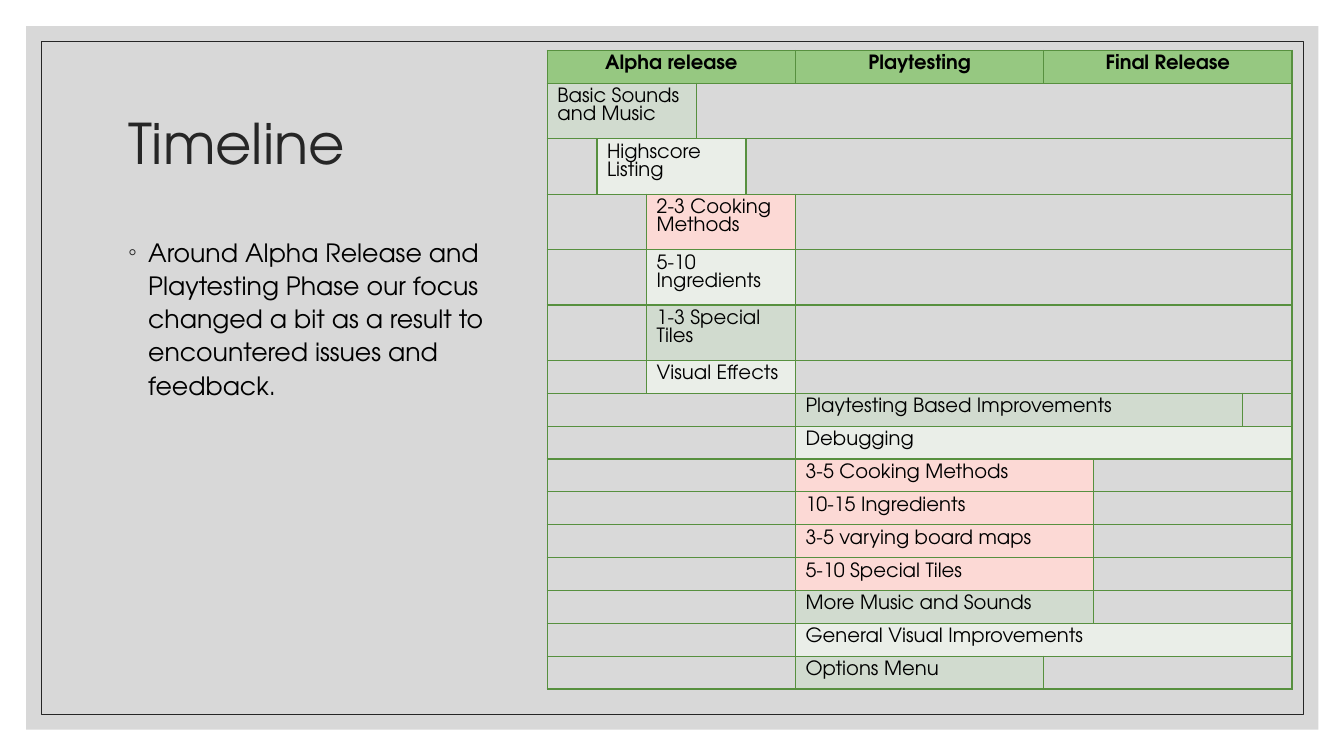
from collections import namedtuple

from lxml import etree
from pptx import Presentation
from pptx import util as u
from pptx.dml.color import RGBColor
from pptx.enum import shapes, text
from pptx.oxml import ns

FONT = "TeX Gyre Adventor"
BLACK = RGBColor(0x00, 0x00, 0x00)
INK = RGBColor(0x26, 0x26, 0x26)
PANEL = RGBColor(0xBF, 0xBF, 0xBF)
EMPTY = RGBColor(0xD9, 0xD9, 0xD9)
HEADER = RGBColor(0x96, 0xC8, 0x81)
SAGE = RGBColor(0xD1, 0xDB, 0xCF)
PALE = RGBColor(0xEA, 0xEE, 0xE8)
PINK = RGBColor(0xFC, 0xD9, 0xD5)
BORDER = RGBColor(0x57, 0x90, 0x3F)

Box = namedtuple("Box", "left top width height")
Task = namedtuple("Task", "label start end color")

COLUMN_UNITS = [1, 1, 1, 1, 1, 5, 1, 3, 1]
DOUBLE_ROW = 0.55
PHASES = [
    Task("Alpha release", 0, 5, HEADER),
    Task("Playtesting", 5, 6, HEADER),
    Task("Final Release", 6, 9, HEADER),
]
TASKS = [
    Task("Basic Sounds and Music", 0, 3, SAGE),
    Task("Highscore Listing", 1, 4, PALE),
    Task("2-3 Cooking Methods", 2, 5, PINK),
    Task("5-10 Ingredients", 2, 5, PALE),
    Task("1-3 Special Tiles", 2, 5, SAGE),
    Task("Visual Effects", 2, 5, PALE),
    Task("Playtesting Based Improvements", 5, 8, SAGE),
    Task("Debugging", 5, 9, PALE),
    Task("3-5 Cooking Methods", 5, 7, PINK),
    Task("10-15 Ingredients", 5, 7, PINK),
    Task("3-5 varying board maps", 5, 7, PINK),
    Task("5-10 Special Tiles", 5, 7, PINK),
    Task("More Music and Sounds", 5, 7, SAGE),
    Task("General Visual Improvements", 5, 9, PALE),
    Task("Options Menu", 5, 6, SAGE),
]
WRAPPED_TASKS = 5


def add_element(parent, tag, **attributes):
    return etree.SubElement(parent, ns.qn(tag), **attributes)


def place(shape, box):
    shape.left, shape.top, shape.width, shape.height = map(u.Inches, box)


def style_runs(paragraph, size, color, bold=False):
    for span in paragraph.runs:
        span.font.name = FONT
        span.font.size = u.Pt(size)
        span.font.bold = bold
        span.font.color.rgb = color


def add_backdrop(page, box):
    panel = page.shapes.add_shape(shapes.MSO_SHAPE.RECTANGLE, *map(u.Inches, box))
    panel.shadow.inherit = False
    panel.fill.solid()
    panel.fill.fore_color.rgb = PANEL
    panel.line.fill.background()
    color = panel._element.spPr.find(ns.qn("a:solidFill")).find(ns.qn("a:srgbClr"))
    add_element(color, "a:alpha", val="60000")

    inset = 0.15
    inner = (box.left + inset, box.top + inset, box.width - 2 * inset, box.height - 2 * inset)
    frame = page.shapes.add_shape(shapes.MSO_SHAPE.RECTANGLE, *map(u.Inches, inner))
    frame.shadow.inherit = False
    frame.fill.background()
    frame.line.color.rgb = INK
    frame.line.width = u.Pt(0.5)


def fill_title(title, box):
    place(title, box)
    title.text_frame.text = "Timeline"
    title.text_frame.auto_size = text.MSO_AUTO_SIZE.NONE
    title.text_frame.vertical_anchor = text.MSO_ANCHOR.MIDDLE
    para = title.text_frame.paragraphs[0]
    para.alignment = text.PP_ALIGN.LEFT
    para.line_spacing = 0.9
    style_runs(para, 40, INK)


def fill_body(body, box):
    place(body, box)
    body.text_frame.text = (
        "Around Alpha Release and Playtesting Phase our focus changed a bit "
        "as a result to encountered issues and feedback."
    )
    body.text_frame.auto_size = text.MSO_AUTO_SIZE.NONE
    para = body.text_frame.paragraphs[0]
    para.line_spacing = 1.1
    para.space_before = u.Pt(9)
    style_runs(para, 18, BLACK)
    properties = para._p.get_or_add_pPr()
    indent = u.Inches(0.2)
    properties.set("marL", str(indent))
    properties.set("indent", str(-indent))
    bullet_color = add_element(properties, "a:buClr")
    add_element(bullet_color, "a:srgbClr", val=str(INK))
    add_element(properties, "a:buChar", char="◦")


def outline_cell(cell):
    properties = cell._tc.get_or_add_tcPr()
    for position, side in enumerate(("a:lnL", "a:lnR", "a:lnT", "a:lnB")):
        line = etree.Element(ns.qn(side), w=str(u.Pt(1)))
        fill = add_element(line, "a:solidFill")
        add_element(fill, "a:srgbClr", val=str(BORDER))
        properties.insert(position, line)


def set_empty_size(cell, size):
    para = cell.text_frame.paragraphs[0]
    ending = add_element(para._p, "a:endParaRPr", sz=str(size * 100))
    add_element(ending, "a:latin", typeface=FONT)


def fill_row(table, row, segments):
    for segment in segments:
        cell = table.cell(row, segment.start)
        if segment.end - segment.start > 1:
            cell.merge(table.cell(row, segment.end - 1))
        cell.text_frame.text = segment.label
        for column in range(segment.start, segment.end):
            part = table.cell(row, column)
            part.fill.solid()
            part.fill.fore_color.rgb = segment.color
            outline_cell(part)
            set_empty_size(part, 14)
        para = cell.text_frame.paragraphs[0]
        header = segment.color == HEADER
        para.alignment = text.PP_ALIGN.CENTER if header else text.PP_ALIGN.LEFT
        style_runs(para, 14, BLACK, header)


def add_schedule(page, box):
    columns = len(COLUMN_UNITS)
    rows = len(TASKS) + 1
    table = page.shapes.add_table(rows, columns, *map(u.Inches, box)).table
    unit = box.width / sum(COLUMN_UNITS)
    for column, units in zip(table.columns, COLUMN_UNITS):
        column.width = u.Inches(unit * units)
    single_row = (box.height - WRAPPED_TASKS * DOUBLE_ROW) / (rows - WRAPPED_TASKS)
    for index, row in enumerate(table.rows):
        wrapped = 1 <= index <= WRAPPED_TASKS
        row.height = u.Inches(DOUBLE_ROW if wrapped else single_row)

    fill_row(table, 0, PHASES)
    for row, task in enumerate(TASKS, start=1):
        before = Task("", 0, task.start, EMPTY)
        after = Task("", task.end, columns, EMPTY)
        segments = [part for part in (before, task, after) if part.end > part.start]
        fill_row(table, row, segments)


def build_timeline(deck):
    page = deck.slides.add_slide(deck.slide_layouts[1])
    title, body = page.placeholders
    add_backdrop(page, Box(0.26, 0.26, 12.82, 6.98))
    for placeholder in (title, body):
        page.shapes._spTree.append(placeholder._element)
    fill_title(title, Box(1.17, 0.7, 11, 1.5))
    fill_body(body, Box(1.17, 2.27, 4.15, 4.1))
    add_schedule(page, Box(5.43, 0.5, 7.39, 6.34))


def main():
    deck = Presentation()
    deck.slide_width = u.Inches(40 / 3)
    deck.slide_height = u.Inches(7.5)
    build_timeline(deck)
    deck.save("out.pptx")


if __name__ == "__main__":
    main()
